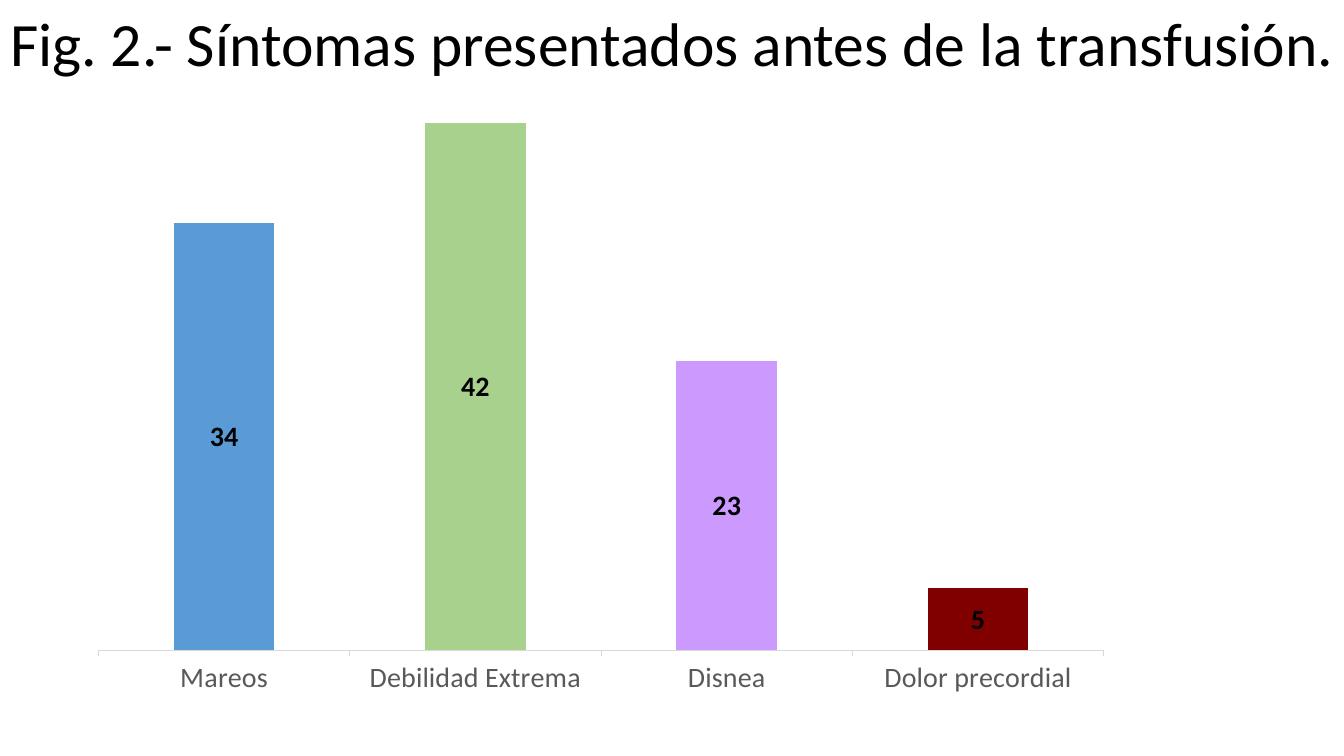
from dataclasses import dataclass

from lxml.etree import Element, SubElement
from pptx import Presentation
from pptx.chart.chart import Chart
from pptx.chart.data import CategoryChartData
from pptx.chart.series import BarSeries
from pptx.dml.color import RGBColor
from pptx.enum.chart import (
    XL_CHART_TYPE,
    XL_LABEL_POSITION,
    XL_TICK_LABEL_POSITION,
    XL_TICK_MARK,
)
from pptx.enum.text import MSO_ANCHOR, MSO_AUTO_SIZE, PP_ALIGN
from pptx.oxml.ns import qn
from pptx.slide import Slide
from pptx.text.text import Font
from pptx.util import Emu, Pt

SCALE = 9525
FACE = "Calibri"
HUES = {
    "black": "000000",
    "grey": "595959",
    "rule": "D9D9D9",
    "blue": "5B9BD5",
    "green": "A9D18E",
    "violet": "CC99FF",
    "maroon": "800000",
}


@dataclass(frozen=True)
class Symptom:
    name: str
    count: int
    hue: str


SYMPTOMS = [
    Symptom("Mareos", 34, "blue"),
    Symptom("Debilidad Extrema", 42, "green"),
    Symptom("Disnea", 23, "violet"),
    Symptom("Dolor precordial", 5, "maroon"),
]


def px(count: int) -> Emu:
    return Emu(count * SCALE)


def color(hue: str) -> RGBColor:
    return RGBColor.from_string(HUES[hue])


def style(font: Font, size: int, hue: str, bold: bool = False) -> None:
    font.name = FACE
    font.size = Pt(size)
    font.bold = bold
    font.color.rgb = color(hue)


def add_title(slide: Slide, text: str) -> None:
    title = slide.shapes.title
    title.left, title.top = px(0), px(0)
    title.width, title.height = px(1297), px(81)
    frame = title.text_frame
    frame.text = text
    frame.word_wrap = False
    frame.auto_size = MSO_AUTO_SIZE.SHAPE_TO_FIT_TEXT
    frame.vertical_anchor = MSO_ANCHOR.TOP
    line = frame.paragraphs[0]
    line.alignment = PP_ALIGN.LEFT
    style(line.runs[0].font, 44, "black")


def place_plot(chart: Chart) -> None:
    area = chart.element.find(".//" + qn("c:plotArea"))
    for old in area.findall(qn("c:layout")):
        area.remove(old)
    layout = Element(qn("c:layout"))
    manual = SubElement(layout, qn("c:manualLayout"))
    rules = {
        "layoutTarget": "inner",
        "xMode": "edge",
        "yMode": "edge",
        "x": "0.014",
        "y": "0.008",
        "w": "0.97",
        "h": "0.836",
    }
    for tag, value in rules.items():
        SubElement(manual, qn(f"c:{tag}")).set("val", value)
    area.insert(0, layout)


def paint_bars(series: BarSeries) -> None:
    series.invert_if_negative = False
    series.format.fill.solid()
    series.format.fill.fore_color.rgb = color(SYMPTOMS[0].hue)
    for index, symptom in enumerate(SYMPTOMS[1:], 1):
        fill = series.points[index].format.fill
        fill.solid()
        fill.fore_color.rgb = color(symptom.hue)
    labels = series.data_labels
    labels.show_value = True
    labels.position = XL_LABEL_POSITION.CENTER
    style(labels.font, 20, "black", bold=True)


def format_axes(chart: Chart) -> None:
    base = chart.category_axis
    base.has_major_gridlines = False
    base.major_tick_mark = XL_TICK_MARK.OUTSIDE
    base.minor_tick_mark = XL_TICK_MARK.NONE
    base.tick_label_position = XL_TICK_LABEL_POSITION.LOW
    base.format.line.color.rgb = color("rule")
    base.format.line.width = Pt(0.75)
    style(base.tick_labels.font, 20, "grey")
    scale = chart.value_axis
    scale.has_major_gridlines = False
    scale.minimum_scale = 0
    scale.maximum_scale = 45
    scale.visible = False


def add_bars(slide: Slide) -> None:
    data = CategoryChartData()
    data.categories = [symptom.name for symptom in SYMPTOMS]
    data.add_series("Series 1", [symptom.count for symptom in SYMPTOMS])
    frame = slide.shapes.add_chart(
        XL_CHART_TYPE.COLUMN_STACKED, px(80), px(76), px(987), px(644), data
    )
    chart = frame.chart
    chart.has_title = False
    chart.has_legend = False
    style(chart.font, 10, "black")
    plot = chart.plots[0]
    plot.vary_by_categories = False
    plot.gap_width = 150
    plot.overlap = 100
    paint_bars(plot.series[0])
    format_axes(chart)
    place_plot(chart)


def main() -> None:
    deck = Presentation()
    deck.slide_width, deck.slide_height = px(1280), px(720)
    slide = deck.slides.add_slide(deck.slide_layouts[5])
    add_title(slide, "Fig. 2.- Síntomas presentados antes de la transfusión.")
    add_bars(slide)
    deck.save("out.pptx")


if __name__ == "__main__":
    main()
